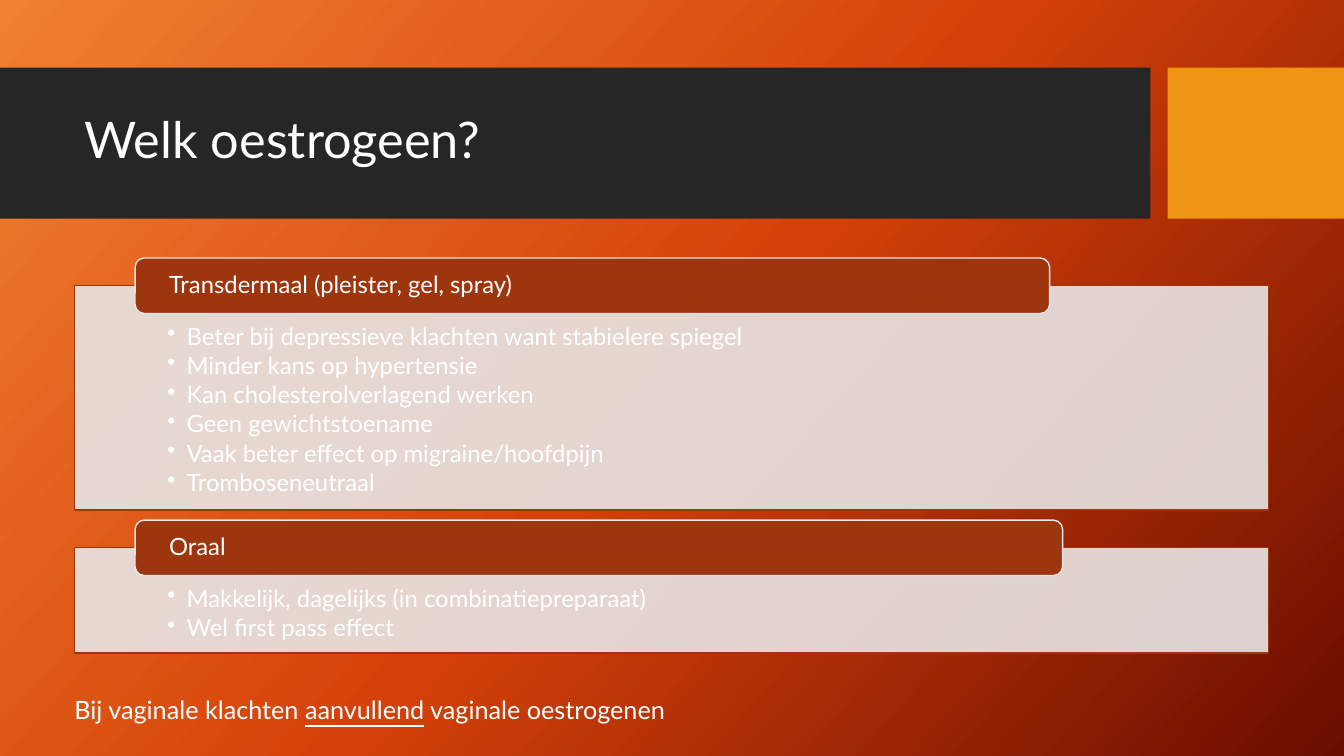
from copy import deepcopy

from lxml.etree import SubElement
from pptx import Presentation
from pptx.dml.color import RGBColor
from pptx.enum.shapes import MSO_SHAPE
from pptx.enum.text import MSO_ANCHOR, PP_ALIGN
from pptx.oxml.ns import qn
from pptx.util import Inches, Pt

THEME = {
    "font": "Lato",
    "text": RGBColor.from_string("FFFFFF"),
    "band": RGBColor.from_string("262626"),
    "accent": RGBColor.from_string("F09415"),
    "rust": RGBColor.from_string("9D360E"),
    "pale": RGBColor.from_string("E7E6E6"),
    "gradient": [(0, "F18031"), (0.5, "D54209"), (1, "6A0D00")],
    "gradient_angle": 360 - 42,
    "title_size": 36,
    "list_size": 17,
    "note_size": 18,
}

SECTIONS = [
    ("Transdermaal (pleister, gel, spray)", 90.7, [
        "Beter bij depressieve klachten want stabielere spiegel",
        "Minder kans op hypertensie",
        "Kan cholesterolverlagend werken",
        "Geen gewichtstoename",
        "Vaak beter effect op migraine/hoofdpijn",
        "Tromboseneutraal",
    ]),
    ("Oraal", 92, [
        "Makkelijk, dagelijks (in combinatiepreparaat)",
        "Wel first pass effect",
    ]),
]
NOTE = [("Bij vaginale klachten ", False), ("aanvullend", True), (" vaginale oestrogenen", False)]

presentation = Presentation()
presentation.slide_width = Inches(13.33)
presentation.slide_height = Inches(7.5)
slide = presentation.slides.add_slide(presentation.slide_layouts[6])

# The grid has 75 rows; columns are as wide as rows are high.
CELL = presentation.slide_height // 75
SLIDE_COLUMNS = presentation.slide_width / CELL


def add_box(kind, cells, fill=None, line=None, insets=(1, 0.5, 1, 0.5), anchor=MSO_ANCHOR.TOP):
    """Add a shape, or a text box when kind is None, at (left, top, width, height) in cells."""
    place = [round(cell * CELL) for cell in cells]
    if kind is None:
        shape = slide.shapes.add_textbox(*place)
    else:
        shape = slide.shapes.add_shape(kind, *place)
        shape.shadow.inherit = False
        shape.fill.solid()
        shape.fill.fore_color.rgb = fill
        if line is None:
            shape.line.fill.background()
        else:
            shape.line.color.rgb = line
            shape.line.width = Pt(1)
    frame = shape.text_frame
    frame.word_wrap = True
    frame.vertical_anchor = anchor
    for side, inset in zip(("left", "top", "right", "bottom"), insets):
        setattr(frame, f"margin_{side}", round(inset * CELL))
    return shape


def write(paragraph, runs, size, **formats):
    """Fill a paragraph with (text, underline) runs and apply paragraph formats."""
    for name, value in {"alignment": PP_ALIGN.LEFT, **formats}.items():
        setattr(paragraph, name, value)
    for text, underline in runs:
        run = paragraph.add_run()
        run.text = text
        run.font.color.rgb = THEME["text"]
        values = {"name": THEME["font"], "size": Pt(size), "underline": underline}
        for name, value in values.items():
            setattr(run.font, name, value)


# Background
background = slide.background.fill
background.gradient()
background.gradient_angle = THEME["gradient_angle"]
stop_list = slide.background._cSld.find(f".//{qn('a:gsLst')}")
stop_list.append(deepcopy(stop_list[-1]))
for stop, (position, color) in zip(background.gradient_stops, THEME["gradient"]):
    stop.position = position
    stop.color.rgb = RGBColor.from_string(color)

# Title band
BAND_TOP, BAND_HEIGHT, ACCENT_WIDTH = 6.7, 15, 17.5
add_box(MSO_SHAPE.RECTANGLE, (0, BAND_TOP, 114.1, BAND_HEIGHT), THEME["band"])
add_box(MSO_SHAPE.RECTANGLE, (SLIDE_COLUMNS - ACCENT_WIDTH, BAND_TOP, ACCENT_WIDTH, BAND_HEIGHT),
        THEME["accent"])
title = add_box(None, (7.4, 8.2, 105.1, 11.8), anchor=MSO_ANCHOR.MIDDLE)
write(title.text_frame.paragraphs[0], [("Welk oestrogeen?", False)], THEME["title_size"],
      line_spacing=0.9)

# Panels, each with a heading tab across its top edge
PANEL_LEFT, PANEL_WIDTH = 7.4, 118.4
TAB_INDENT, TAB_HEIGHT, TAB_RISE = 6, 5.5, 2.7
PANEL_PADDING, LINE_HEIGHT, PANEL_GAP = 4.6, 2.95, 1
list_size = THEME["list_size"]
tab_top = 25.6
for heading, tab_width, points in SECTIONS:
    panel_top = tab_top + TAB_RISE
    panel_height = PANEL_PADDING + LINE_HEIGHT * len(points)
    panel = add_box(MSO_SHAPE.RECTANGLE, (PANEL_LEFT, panel_top, PANEL_WIDTH, panel_height),
                    THEME["pale"], THEME["rust"], insets=(9.2, 3.9, 9.2, 1.3))
    fill_color = panel.fill._xPr.find(f"{qn('a:solidFill')}/{qn('a:srgbClr')}")
    SubElement(fill_color, qn("a:alpha"), val="90000")
    frame = panel.text_frame
    for index, point in enumerate(points):
        paragraph = frame.add_paragraph() if index else frame.paragraphs[0]
        properties = paragraph._p.get_or_add_pPr()
        indent = round(1.9 * CELL)
        properties.set("marL", str(indent))
        properties.set("indent", str(-indent))
        SubElement(properties, qn("a:buChar"), char="•")
        write(paragraph, [(point, False)], list_size,
              line_spacing=0.9, space_after=Pt(0.15 * list_size))

    tab = add_box(MSO_SHAPE.ROUNDED_RECTANGLE,
                  (PANEL_LEFT + TAB_INDENT, tab_top, tab_width, TAB_HEIGHT),
                  THEME["rust"], THEME["pale"], insets=(3.1, 0, 3.1, 0),
                  anchor=MSO_ANCHOR.MIDDLE)
    write(tab.text_frame.paragraphs[0], [(heading, False)], list_size, line_spacing=0.9)
    tab_top = panel_top + panel_height + PANEL_GAP

# Closing note
note = add_box(None, (6.4, 68.4, 126, 4))
write(note.text_frame.paragraphs[0], NOTE, THEME["note_size"])

presentation.save("out.pptx")
